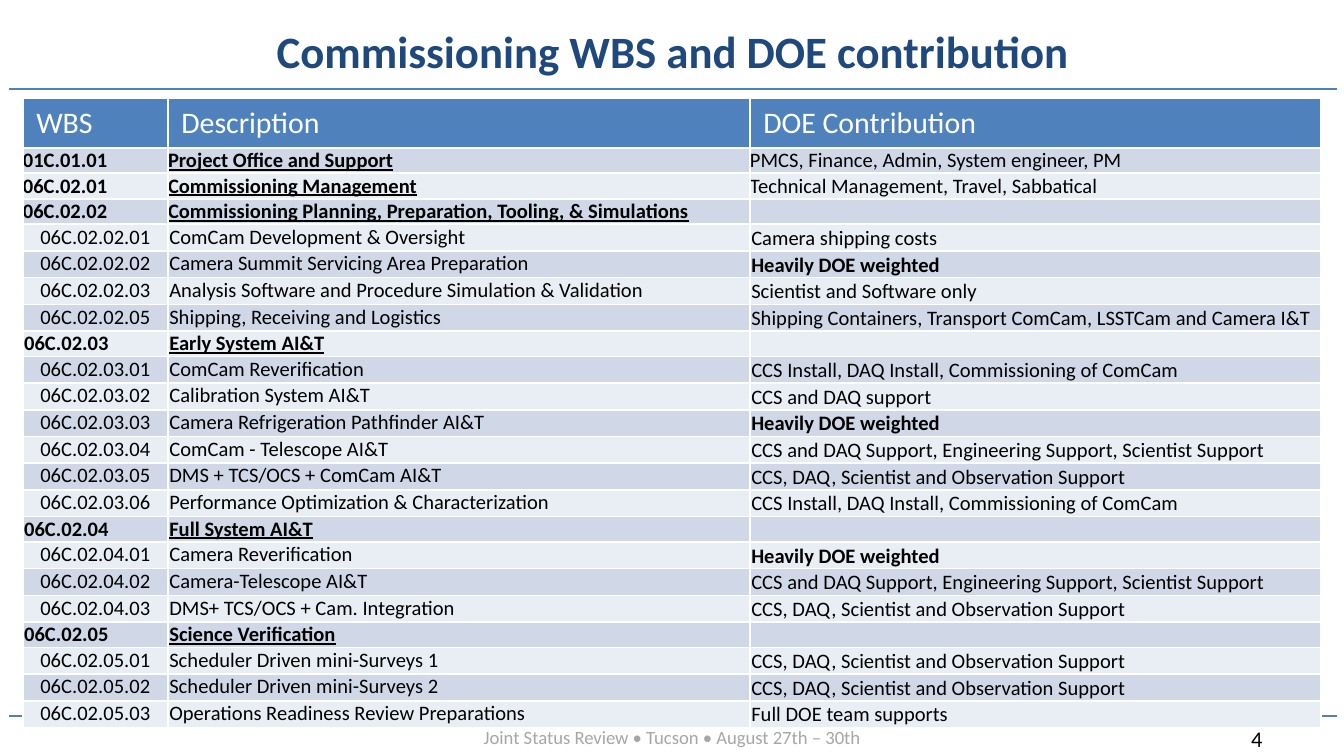
from lxml.etree import SubElement
from pptx import Presentation
from pptx.dml.color import RGBColor
from pptx.enum.shapes import MSO_CONNECTOR as Connector
from pptx.enum.text import MSO_ANCHOR as Anchor, PP_ALIGN as Align
from pptx.oxml.ns import qn
from pptx.util import Inches, Pt

DOE_HEAVY = "Heavily DOE weighted"
OBSERVING = "CCS, DAQ, Scientist and Observation Support"
ENGINEERING = "CCS and DAQ Support, Engineering Support, Scientist Support"
INSTALL = "CCS Install, DAQ Install, Commissioning of ComCam"

HEADINGS = ("WBS", "Description", "DOE Contribution")
WBS_ROWS = [
    ("01C.01.01", "Project Office and Support", "PMCS, Finance, Admin, System engineer, PM"),
    ("06C.02.01", "Commissioning Management", "Technical Management, Travel, Sabbatical"),
    ("06C.02.02", "Commissioning Planning, Preparation, Tooling, & Simulations", ""),
    ("06C.02.02.01", "ComCam Development & Oversight", "Camera shipping costs"),
    ("06C.02.02.02", "Camera Summit Servicing Area Preparation", DOE_HEAVY),
    ("06C.02.02.03", "Analysis Software and Procedure Simulation & Validation",
     "Scientist and Software only"),
    ("06C.02.02.05", "Shipping, Receiving and Logistics",
     "Shipping Containers, Transport ComCam, LSSTCam and Camera I&T"),
    ("06C.02.03", "Early System AI&T", ""),
    ("06C.02.03.01", "ComCam Reverification", INSTALL),
    ("06C.02.03.02", "Calibration System AI&T", "CCS and DAQ support"),
    ("06C.02.03.03", "Camera Refrigeration Pathfinder AI&T", DOE_HEAVY),
    ("06C.02.03.04", "ComCam - Telescope AI&T", ENGINEERING),
    ("06C.02.03.05", "DMS + TCS/OCS + ComCam AI&T", OBSERVING),
    ("06C.02.03.06", "Performance Optimization & Characterization", INSTALL),
    ("06C.02.04", "Full System AI&T", ""),
    ("06C.02.04.01", "Camera Reverification", DOE_HEAVY),
    ("06C.02.04.02", "Camera-Telescope AI&T", ENGINEERING),
    ("06C.02.04.03", "DMS+ TCS/OCS + Cam. Integration", OBSERVING),
    ("06C.02.05", "Science Verification", ""),
    ("06C.02.05.01", "Scheduler Driven mini-Surveys 1", OBSERVING),
    ("06C.02.05.02", "Scheduler Driven mini-Surveys 2", OBSERVING),
    ("06C.02.05.03", "Operations Readiness Review Preparations", "Full DOE team supports"),
]
COLUMN_WIDTHS = (1.08, 4.33, 4.25)
TABLE_HEIGHT, HEADER_HEIGHT, SECTION_HEIGHT = 4.69, 0.37, 0.19


def color(hex_string):
    return RGBColor.from_string(hex_string)


def is_section(code):
    return code.count(".") == 2


def write(frame, text, size=11, ink="000000", bold=False, underline=False,
          align=None, indent=0, font="Calibri"):
    """Put one formatted paragraph into a text frame."""
    paragraph = frame.paragraphs[0]
    if align is not None:
        paragraph.alignment = align
    if indent:
        properties = paragraph._p.get_or_add_pPr()
        properties.set("marL", str(Inches(indent)))
        properties.set("indent", "0")
    if not text:
        # An empty cell still needs its size, or the row grows.
        SubElement(paragraph._p, qn("a:endParaRPr")).set("sz", str(size * 100))
        return
    run = paragraph.add_run()
    run.text = text
    run.font.name, run.font.size = font, Pt(size)
    run.font.bold, run.font.underline = bold, underline
    run.font.color.rgb = color(ink)


class ReviewSlide:
    BLUE, NAVY, GREY, WHITE = "4F81BD", "1F497D", "A6A6A6", "FFFFFF"
    BANDS = ("D0D8E8", "E9EDF4")

    def __init__(self, deck):
        self.slide = deck.slides.add_slide(deck.slide_layouts[5])
        self.shapes = self.slide.shapes

    def title(self, text, left, top, width, height):
        title = self.shapes.title
        title.left, title.top = Inches(left), Inches(top)
        title.width, title.height = Inches(width), Inches(height)
        frame = title.text_frame
        frame.vertical_anchor = Anchor.MIDDLE
        frame.margin_left = frame.margin_right = 0
        write(frame, text, size=24, ink=self.NAVY, bold=True, align=Align.CENTER)

    def rule(self, y):
        line = self.shapes.add_connector(
            Connector.STRAIGHT, Inches(0.07), Inches(y), Inches(9.95), Inches(y))
        line.line.color.rgb = color(self.BLUE)
        line.line.width = Pt(1)
        SubElement(line._element.spPr, qn("a:effectLst"))

    def label(self, text, left, top, width, height, **style):
        box = self.shapes.add_textbox(
            Inches(left), Inches(top), Inches(width), Inches(height))
        box.text_frame.word_wrap = True
        write(box.text_frame, text, **style)

    def cell(self, cell, text, fill, inset=None, **style):
        cell.fill.solid()
        cell.fill.fore_color.rgb = color(fill)
        if inset is not None:
            cell.margin_left = cell.margin_right = Inches(inset)
            cell.margin_top = cell.margin_bottom = 0
        write(cell.text_frame, text, **style)

    def wbs_table(self, left, top):
        table = self.shapes.add_table(
            len(WBS_ROWS) + 1, len(HEADINGS), Inches(left), Inches(top),
            Inches(sum(COLUMN_WIDTHS)), Inches(TABLE_HEIGHT)).table
        for column, width in zip(table.columns, COLUMN_WIDTHS):
            column.width = Inches(width)

        sections = sum(is_section(code) for code, *_ in WBS_ROWS)
        task_height = ((TABLE_HEIGHT - HEADER_HEIGHT - sections * SECTION_HEIGHT)
                       / (len(WBS_ROWS) - sections))

        table.rows[0].height = Inches(HEADER_HEIGHT)
        for column, heading in enumerate(HEADINGS):
            self.cell(table.cell(0, column), heading, self.BLUE, size=16, ink=self.WHITE)

        for row, (code, description, contribution) in enumerate(WBS_ROWS, start=1):
            section = is_section(code)
            table.rows[row].height = Inches(SECTION_HEIGHT if section else task_height)
            fill = self.BANDS[(row - 1) % 2]
            inset = 0 if row <= 3 else 0.01
            code_cell, description_cell, doe_cell = (table.cell(row, c) for c in range(3))
            self.cell(code_cell, code, fill, inset, bold=section,
                      indent=0 if section else 0.12)
            self.cell(description_cell, description, fill, inset,
                      bold=section, underline=section)
            self.cell(doe_cell, contribution, fill, inset, bold=contribution == DOE_HEAVY)
            if not section:
                doe_cell.vertical_anchor = Anchor.BOTTOM


def main():
    deck = Presentation()
    deck.slide_width = Inches(10)
    deck.slide_height = deck.slide_width * 9 // 16
    review = ReviewSlide(deck)
    for y in (5.33, 0.66):
        review.rule(y)
    review.label("4", 9.21, 5.35, 0.62, 0.3, size=12)
    review.label("Joint Status Review • Tucson • August 27th – 30th", 0.5, 5.35, 9, 0.27,
                 size=10, ink=review.GREY, align=Align.CENTER)
    review.title("Commissioning WBS and DOE contribution", 1.92, 0.15, 6.17, 0.46)
    review.wbs_table(0.17, 0.73)
    deck.save("out.pptx")


if __name__ == "__main__":
    main()
